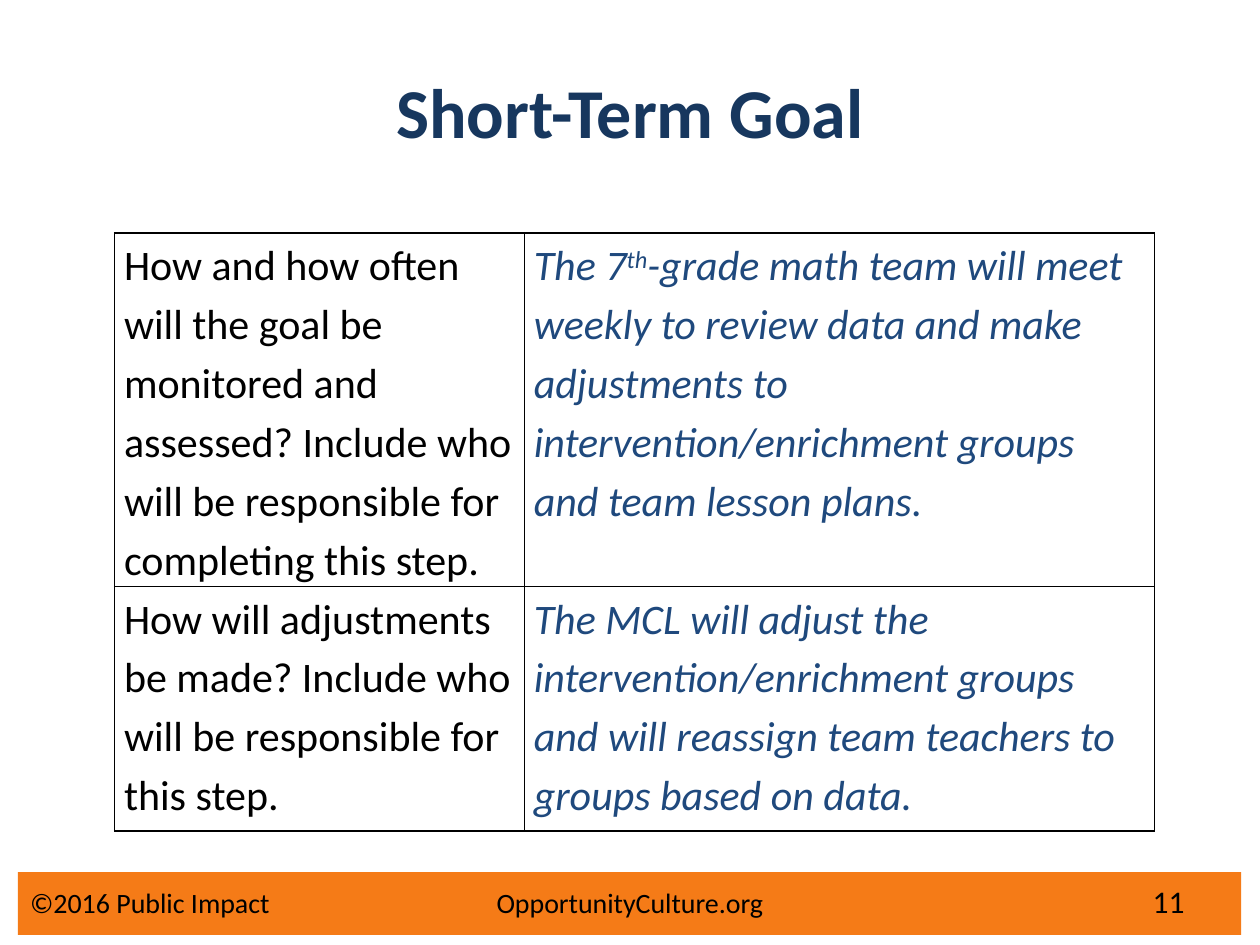
from pptx import Presentation
from pptx import util as u
from pptx.dml import color
from pptx.enum import shapes, text
from pptx.oxml import ns, parse_xml

BLACK, NAVY, BLUE, ORANGE = "000000", "17375E", "1F497D", "F57B17"


def rgb(value):
    return color.RGBColor.from_string(value)


def set_all(target, values):
    for name, value in values.items():
        setattr(target, name, value)


class SlideBuilder:
    font_name = "Calibri"

    def __init__(self, slide):
        self.slide = slide

    def style(self, font, size, ink=BLACK, **values):
        set_all(font, {"name": self.font_name, "size": u.Pt(size), **values})
        font.color.rgb = rgb(ink)

    def title(self, wording, box):
        heading = self.slide.shapes.title
        set_all(heading, dict(zip(("left", "top", "width", "height"), map(u.Cm, box))))
        heading.text_frame.text = wording
        heading.text_frame.vertical_anchor = text.MSO_ANCHOR.MIDDLE
        line = heading.text_frame.paragraphs[0]
        line.alignment = text.PP_ALIGN.CENTER
        self.style(line.font, 40, NAVY, bold=True)

    def bar(self, box, fill):
        band = self.slide.shapes.add_shape(shapes.MSO_SHAPE.RECTANGLE, *map(u.Cm, box))
        band.shadow.inherit = False
        band.fill.solid()
        band.fill.fore_color.rgb = rgb(fill)
        band.line.fill.background()

    def label(self, wording, box, size, align=text.PP_ALIGN.LEFT, tab=None):
        frame = self.slide.shapes.add_textbox(*map(u.Cm, box)).text_frame
        set_all(frame, {"word_wrap": True, "vertical_anchor": text.MSO_ANCHOR.MIDDLE})
        line = frame.paragraphs[0]
        line.text = wording
        line.alignment = align
        if tab:
            line._p.get_or_add_pPr().append(parse_xml(
                f'<a:tabLst {ns.nsdecls("a")}><a:tab pos="{u.Cm(tab)}" algn="l"/></a:tabLst>'))
        self.style(line.font, size)

    def borders(self, cell):
        for side in ("lnL", "lnR", "lnT", "lnB"):
            cell._tc.get_or_add_tcPr().append(parse_xml(
                f'<a:{side} {ns.nsdecls("a")} w="{u.Pt(1)}"><a:solidFill>'
                f'<a:srgbClr val="{BLACK}"/></a:solidFill></a:{side}>'))

    def table(self, rows, corner, widths, heights):
        grid = self.slide.shapes.add_table(
            len(rows), len(widths), *map(u.Cm, (*corner, sum(widths), sum(heights)))).table
        set_all(grid, {"first_row": False, "horz_banding": False})
        for column, width in zip(grid.columns, widths):
            column.width = u.Cm(width)
        for row, height in zip(grid.rows, heights):
            row.height = u.Cm(height)
        looks = ({"ink": BLACK}, {"ink": BLUE, "italic": True})
        for r, row in enumerate(rows):
            for c, (parts, look) in enumerate(zip(row, looks)):
                self.cell(grid.cell(r, c), parts, look)

    def cell(self, cell, parts, look):
        set_all(cell, {"margin_left": u.Cm(0.19), "margin_right": u.Cm(0.19),
                       "margin_top": 0, "margin_bottom": 0})
        self.borders(cell)
        cell.fill.background()
        line = cell.text_frame.paragraphs[0]
        line.line_spacing = 1.15
        # Every second part is superscript
        for i, part in enumerate(parts):
            run = line.add_run()
            run.text = part
            self.style(run.font, 24, **look)
            if i % 2:
                run.font._element.set("baseline", "30000")


GOAL_ROWS = [
    (["How and how often will the goal be monitored and assessed? "
      "Include who will be responsible for completing this step."],
     ["The 7", "th", "-grade math team will meet weekly to review data and make adjustments "
      "to intervention/enrichment groups and team lesson plans."]),
    (["How will adjustments be made? Include who will be responsible for this step."],
     ["The MCL will adjust the intervention/enrichment groups and will reassign "
      "team teachers to groups based on data."]),
]


def main():
    deck = Presentation()
    set_all(deck, {"slide_width": u.Cm(25.4), "slide_height": u.Cm(19.05)})
    page = SlideBuilder(deck.slides.add_slide(deck.slide_layouts[5]))

    # Heading and goal table
    page.title("Short-Term Goal", (1.27, 0.64, 22.86, 3.18))
    page.table(GOAL_ROWS, (2.31, 4.7), (8.26, 12.7), (6.58, 4.93))

    # Footer
    page.bar((0.36, 17.58, 24.66, 1.27), ORANGE)
    page.label("©2016 Public Impact\tOpportunityCulture.org", (0.36, 17.68, 19.13, 1.02), 16, tab=9.4)
    page.label("11", (22.43, 17.65, 1.7, 1.02), 18, text.PP_ALIGN.RIGHT)

    deck.save("out.pptx")


if __name__ == "__main__":
    main()
